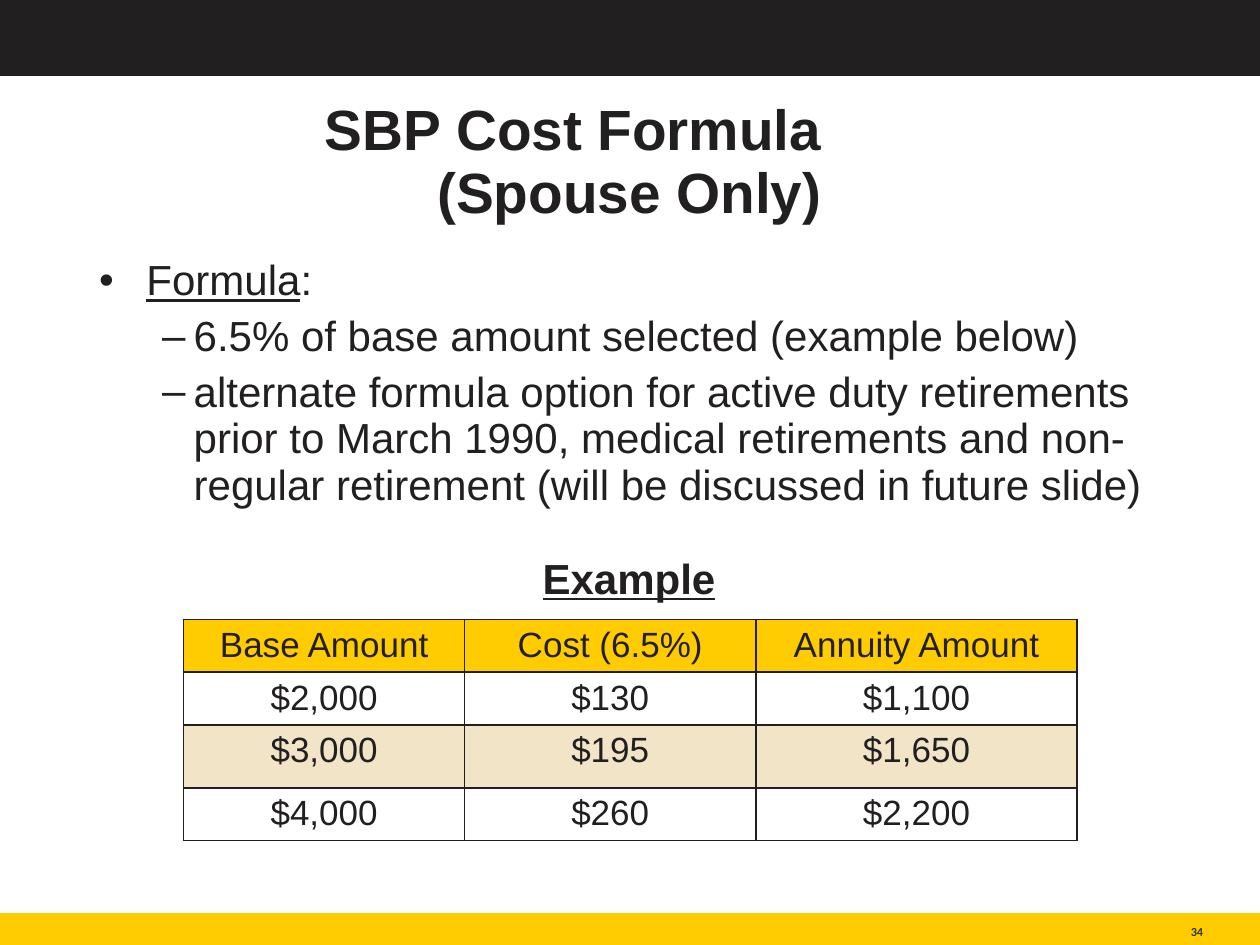
from pptx import Presentation
from pptx.util import Pt
from pptx.dml.color import RGBColor
from pptx.enum.shapes import MSO_SHAPE
from pptx.enum.text import MSO_ANCHOR, MSO_AUTO_SIZE, PP_ALIGN
from pptx.oxml.ns import qn
from lxml.etree import SubElement

TITLE = "SBP Cost Formula\v(Spouse Only)"
# level, [(text, underlined)]
BODY = [
    (0, [("Formula", True), (":", False)]),
    (1, [("6.5% of base amount selected (example below)", False)]),
    (1, [("alternate formula option for active duty retirements prior to March 1990, "
          "medical retirements and non-regular retirement "
          "(will be discussed in future slide)", False)]),
]
EXAMPLE = "Example"
TABLE = [
    ("Base Amount", "Cost (6.5%)", "Annuity Amount"),
    ("$2,000", "$130", "$1,100"),
    ("$3,000", "$195", "$1,650"),
    ("$4,000", "$260", "$2,200"),
]
PAGE = "34"

COL_WIDTHS = [160.5, 166.5, 183.5]
ROW_HEIGHTS = [29.5, 29.5, 36, 29.5]
ROW_FILLS = ["gold", None, "sand", None]
# bullet, left margin, hanging indent, space before
LEVELS = [("•", 27, 27, 0), ("‒", 54, 18, 5)]

THEME = {
    "font": "Arial", "page_font": "Calibri",
    "ink": "221F20", "gold": "FFCC01", "sand": "F1E4C7", "page": "2F372F",
    "title_size": 32.4, "body_size": 24, "table_size": 20, "page_size": 7,
    "line_spacing": 0.93,
}


def color(name):
    return RGBColor.from_string(THEME[name])


def style(p, size, bold=False, underline=False, ink="ink", font="font"):
    for r in p.runs:
        f = r.font
        f.name, f.size = THEME[font], Pt(THEME[size])
        f.bold, f.underline = bold, underline
        f.color.rgb = color(ink)


def place(shape, left, top, width, height):
    shape.left, shape.top, shape.width, shape.height = map(Pt, (left, top, width, height))


def add_bar(s, top, height, fill):
    bar = s.shapes.add_shape(MSO_SHAPE.RECTANGLE, 0, Pt(top), Pt(720), Pt(height))
    bar.shadow.inherit = False
    bar.fill.solid()
    bar.fill.fore_color.rgb = bar.line.color.rgb = color(fill)
    bar.line.width = Pt(1)


def add_label(s, text, box):
    label = s.shapes.add_textbox(*map(Pt, box))
    label.text_frame.text = text
    label.text_frame.word_wrap = False
    return label.text_frame


def add_title(s):
    title = s.shapes.title
    place(title, 49.5, 53.5, 621, 79)
    tf = title.text_frame
    tf.text = TITLE
    tf.auto_size = MSO_AUTO_SIZE.NONE
    tf.vertical_anchor = MSO_ANCHOR.MIDDLE
    tf.margin_right = Pt(201)  # both lines end at the same point
    p = tf.paragraphs[0]
    p.alignment = PP_ALIGN.RIGHT
    p.line_spacing = THEME["line_spacing"]
    style(p, "title_size", bold=True)


def set_bullet(p, char, left, hanging):
    pPr = p._p.get_or_add_pPr()
    pPr.set("marL", str(Pt(left)))
    pPr.set("indent", str(-Pt(hanging)))
    SubElement(pPr, qn("a:buFont")).set("typeface", THEME["font"])
    SubElement(pPr, qn("a:buChar")).set("char", char)


def add_body(s):
    body = s.placeholders[1]
    place(body, 49.5, 144, 621, 342.5)
    tf = body.text_frame
    tf.auto_size = MSO_AUTO_SIZE.NONE
    for i, (level, parts) in enumerate(BODY):
        p = tf.add_paragraph() if i else tf.paragraphs[0]
        char, left, hanging, before = LEVELS[level]
        p.level = level
        set_bullet(p, char, left, hanging)
        p.line_spacing = THEME["line_spacing"]
        p.space_before = Pt(before)
        for text, _ in parts:
            p.add_run().text = text
        style(p, "body_size")
        for r, (_, underlined) in zip(p.runs, parts):
            r.font.underline = underlined


def set_borders(cell):
    tcPr = cell._tc.get_or_add_tcPr()
    for i, side in enumerate(("lnL", "lnR", "lnT", "lnB")):
        ln = tcPr.makeelement(qn("a:" + side), {"w": str(Pt(1))})
        fill = SubElement(ln, qn("a:solidFill"))
        SubElement(fill, qn("a:srgbClr")).set("val", THEME["ink"])
        tcPr.insert(i, ln)


def add_cost_table(s):
    frame = s.shapes.add_table(len(TABLE), len(TABLE[0]), Pt(105), Pt(354),
                               Pt(sum(COL_WIDTHS)), Pt(sum(ROW_HEIGHTS)))
    table = frame.table
    table.first_row = table.horz_banding = False
    for column, width in zip(table.columns, COL_WIDTHS):
        column.width = Pt(width)
    for row, height, fill, texts in zip(table.rows, ROW_HEIGHTS, ROW_FILLS, TABLE):
        row.height = Pt(height)
        for cell, text in zip(row.cells, texts):
            cell.text = text
            cell.margin_bottom = Pt(2.5)
            p = cell.text_frame.paragraphs[0]
            p.alignment = PP_ALIGN.CENTER
            style(p, "table_size")
            if fill:
                cell.fill.solid()
                cell.fill.fore_color.rgb = color(fill)
            else:
                cell.fill.background()
            set_borders(cell)


def add_page_number(s):
    tf = add_label(s, PAGE, (625, 522, 62.5, 14.5))
    tf.margin_left = tf.margin_right = tf.margin_top = tf.margin_bottom = 0
    tf.vertical_anchor = MSO_ANCHOR.BOTTOM
    p = tf.paragraphs[0]
    p.alignment = PP_ALIGN.RIGHT
    style(p, "page_size", bold=True, ink="page", font="page_font")


def main():
    prs = Presentation()
    prs.slide_width, prs.slide_height = Pt(720), Pt(540)
    s = prs.slides.add_slide(prs.slide_layouts[1])
    add_bar(s, 0.5, 42.5, "ink")
    add_bar(s, 522, 19.5, "gold")
    add_page_number(s)
    add_title(s)
    add_body(s)
    add_cost_table(s)
    tf = add_label(s, EXAMPLE, (303, 312, 114.5, 36))
    style(tf.paragraphs[0], "body_size", bold=True, underline=True)
    prs.save("out.pptx")


if __name__ == "__main__":
    main()
